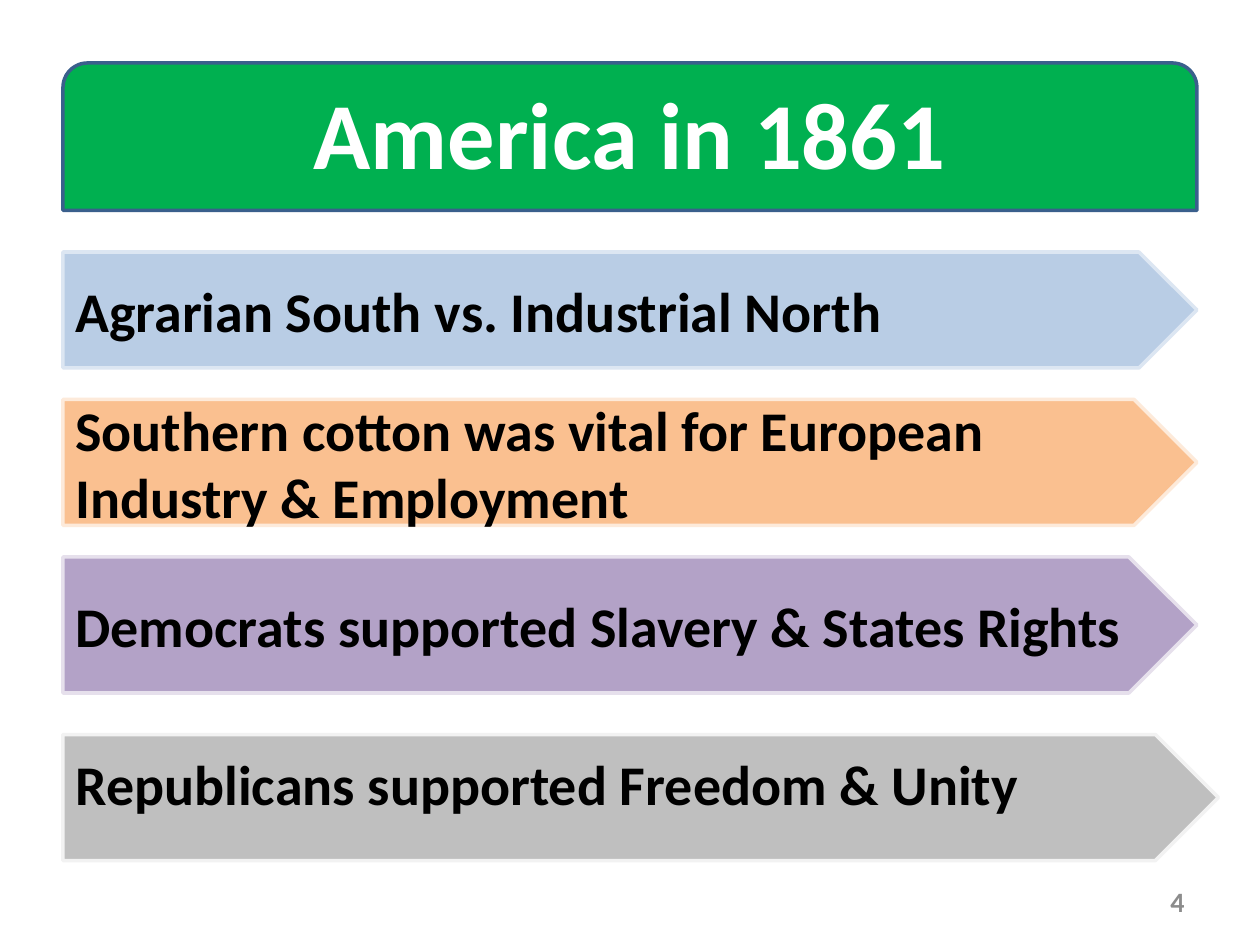
from pptx import Presentation
from pptx.dml.color import RGBColor
from pptx.enum.shapes import MSO_SHAPE as Shape
from pptx.enum.text import MSO_ANCHOR as Anchor, PP_ALIGN as Align
from pptx.util import Inches, Pt


def rgb(code):
    return RGBColor.from_string(code)


class Deck:
    font = "Calibri"
    left, width = 0.5, 9

    def __init__(self, slide):
        self.slide = slide

    def label(self, shape, text, size, color, align, anchor=Anchor.MIDDLE):
        frame = shape.text_frame
        frame.word_wrap = True
        frame.vertical_anchor = anchor
        para = frame.paragraphs[0]
        para.alignment = align
        run = para.add_run()
        run.text = text
        run.font.name = self.font
        run.font.size = Pt(size)
        run.font.bold = True
        run.font.color.rgb = rgb(color)
        return frame

    def block(self, kind, top, width, height, fill, line):
        shape = self.slide.shapes.add_shape(
            kind, Inches(self.left), Inches(top), Inches(width), Inches(height))
        shape.shadow.inherit = False
        shape.fill.solid()
        shape.fill.fore_color.rgb = rgb(fill)
        shape.line.color.rgb = rgb(line)
        shape.line.width = Pt(2)
        return shape

    def title(self, text):
        banner = self.block(Shape.ROUND_2_SAME_RECTANGLE, 0.5, self.width, 1.17,
                            "00B050", "3A5F8C")
        title = self.slide.shapes.title
        title.left, title.top = Inches(self.left), Inches(0.42)
        title.width, title.height = Inches(self.width), Inches(1.25)
        self.label(title, text, 54, "FFFFFF", Align.CENTER)
        # Keep the banner behind the title
        title.element.addprevious(banner.element)

    def arrow(self, text, top, width, height, fill, line, anchor=Anchor.MIDDLE):
        shape = self.block(Shape.PENTAGON, top, width, height, fill, line)
        return self.label(shape, text, 32, "000000", Align.LEFT, anchor)

    def number(self, text):
        box = self.slide.shapes.add_textbox(
            Inches(7.17), Inches(6.95), Inches(2.33), Inches(0.4))
        self.label(box, text, 16, "8C8C8C", Align.RIGHT)


def main():
    prs = Presentation()
    prs.slide_width, prs.slide_height = Inches(10), Inches(7.5)
    deck = Deck(prs.slides.add_slide(prs.slide_layouts[5]))

    # Heading and page number
    deck.title("America in 1861")
    deck.number("4")

    # Key points, one arrow each
    points = [
        ("Agrarian South vs. Industrial North", 2, 9, 0.92, "B9CDE5", "DCE6F2"),
        ("Southern cotton was vital for European Industry & Employment",
         3.17, 9, 1, "FAC090", "FDEADA"),
        ("Democrats supported Slavery & States Rights",
         4.42, 9, 1.08, "B3A2C7", "E6E0EC"),
    ]
    for point in points:
        deck.arrow(*point)

    # The last arrow is longer and its text sits higher
    last = deck.arrow("Republicans supported Freedom & Unity",
                      5.83, 9.17, 1, "BFBFBF", "F2F2F2", Anchor.BOTTOM)
    last.margin_bottom = Inches(0.35)

    prs.save("out.pptx")


if __name__ == "__main__":
    main()
